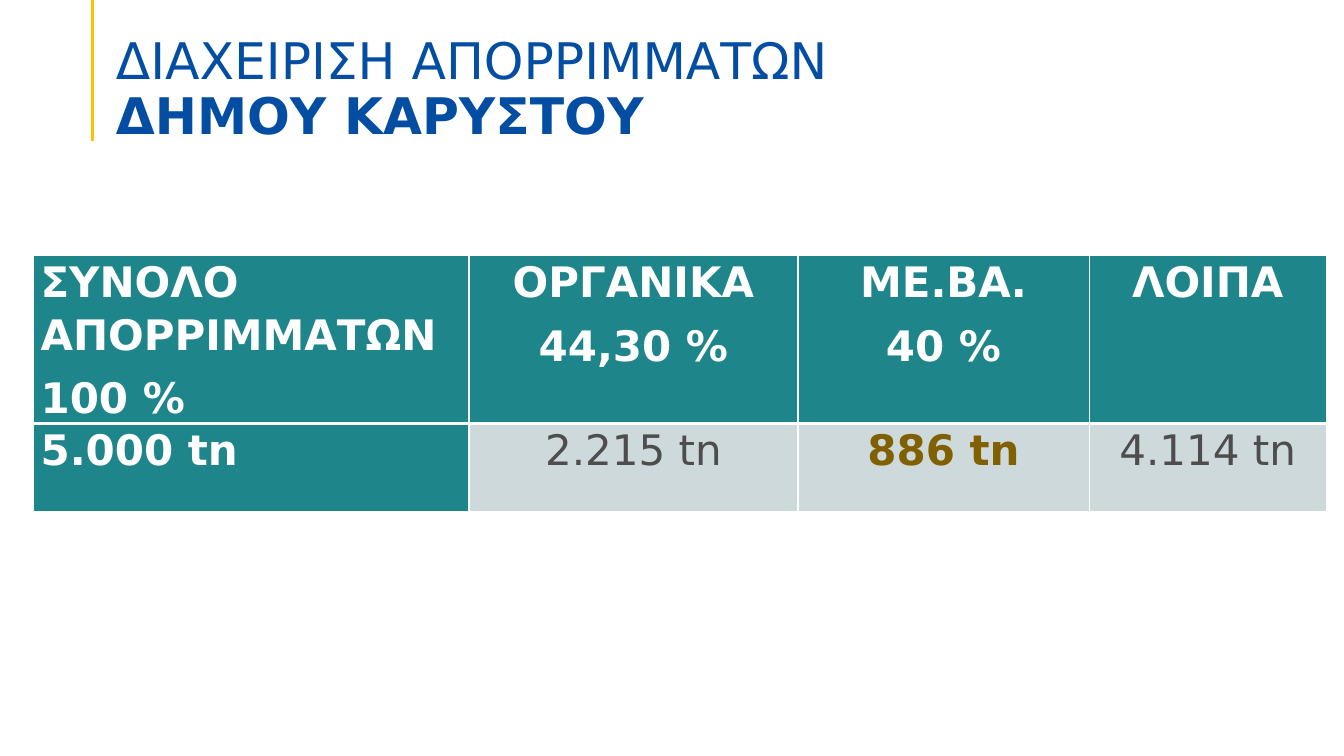
import pptx
import pptx.util
import pptx.dml.color
import pptx.enum.shapes
import pptx.enum.text
import pptx.oxml
import pptx.oxml.ns

Pt = pptx.util.Pt
ALIGN = pptx.enum.text.PP_ALIGN
ANCHOR = pptx.enum.text.MSO_ANCHOR

COLORS = {
    "blue": "034EA2", "gold": "FFC000", "teal": "1E858B", "pale": "CDD9DA",
    "white": "FFFFFF", "gray": "4D4D4D", "brown": "806000",
}
FONT = "DejaVu Sans"
TITLE = [("ΔΙΑΧΕΙΡΙΣΗ ΑΠΟΡΡΙΜΜΑΤΩΝ", False), ("ΔΗΜΟΥ ΚΑΡΥΣΤΟΥ", True)]
WASTE = [
    [["ΣΥΝΟΛΟ ΑΠΟΡΡΙΜΜΑΤΩΝ", "100 %"], ["ΟΡΓΑΝΙΚΑ", "44,30 %"], ["ΜΕ.ΒΑ.", "40 %"], ["ΛΟΙΠΑ"]],
    [["5.000 tn"], ["2.215 tn"], ["886 tn"], ["4.114 tn"]],
]
HIGHLIGHT = (1, 2)
COL_WIDTHS = [311, 235, 208, 169.5]
ROW_HEIGHTS = [120, 63]


def rgb(name):
    return pptx.dml.color.RGBColor.from_string(COLORS[name])


def add_text(p, text, size=30, color="white", bold=False, align=ALIGN.LEFT, spacing=1.07, after=8):
    p.alignment = align
    p.line_spacing = spacing
    p.space_before = Pt(0)
    p.space_after = Pt(after)
    r = p.add_run()
    r.text = text
    r.font.name = FONT
    r.font.size = Pt(size)
    r.font.bold = bold
    r.font.color.rgb = rgb(color)


def set_borders(cell, bottom):
    tc_pr = cell._tc.get_or_add_tcPr()
    for side, width in (("L", 1), ("R", 1), ("T", 1), ("B", bottom)):
        tc_pr.append(pptx.oxml.parse_xml(
            f'<a:ln{side} {pptx.oxml.ns.nsdecls("a")} w="{Pt(width)}"><a:solidFill>'
            f'<a:srgbClr val="{COLORS["white"]}"/></a:solidFill></a:ln{side}>'))


def build_title(s):
    sp = s.shapes.title
    sp.left, sp.top, sp.width, sp.height = Pt(75.6), Pt(17.3), Pt(736.6), Pt(86.4)
    tf = sp.text_frame
    tf.word_wrap = True
    tf.auto_size = pptx.enum.text.MSO_AUTO_SIZE.NONE
    tf.vertical_anchor = ANCHOR.BOTTOM
    tf.margin_left = tf.margin_right = Pt(7.2)
    tf.margin_top, tf.margin_bottom = Pt(3.6), Pt(0)
    p = tf.paragraphs[0]
    for i, (line, bold) in enumerate(TITLE):
        if i:
            p.add_line_break()
        add_text(p, line, size=36, color="blue", bold=bold, spacing=0.9, after=0)


def build_accent(s):
    line = s.shapes.add_connector(pptx.enum.shapes.MSO_CONNECTOR.STRAIGHT, Pt(66.2), 0, Pt(66.2), Pt(100.8))
    line.line.color.rgb = rgb("gold")
    line.line.width = Pt(2.25)
    line._element.spPr.append(pptx.oxml.parse_xml(f'<a:effectLst {pptx.oxml.ns.nsdecls("a")}/>'))


def build_table(s):
    table = s.shapes.add_table(len(WASTE), len(COL_WIDTHS), Pt(24), Pt(182.4),
                               Pt(sum(COL_WIDTHS)), Pt(sum(ROW_HEIGHTS))).table
    for column, width in zip(table.columns, COL_WIDTHS):
        column.width = Pt(width)
    for i, row in enumerate(WASTE):
        table.rows[i].height = Pt(ROW_HEIGHTS[i])
        for j, lines in enumerate(row):
            cell = table.cell(i, j)
            header = i == 0 or j == 0
            highlight = (i, j) == HIGHLIGHT
            set_borders(cell, 3 if i == 0 else 1)
            cell.fill.solid()
            cell.fill.fore_color.rgb = rgb("teal" if header else "pale")
            cell.margin_left = cell.margin_right = Pt(5)
            cell.margin_top = cell.margin_bottom = Pt(0)
            cell.vertical_anchor = ANCHOR.TOP
            tf = cell.text_frame
            for k, line in enumerate(lines):
                p = tf.add_paragraph() if k else tf.paragraphs[0]
                add_text(p, line, bold=header or highlight,
                         color="white" if header else "brown" if highlight else "gray",
                         align=ALIGN.CENTER if j else ALIGN.LEFT)


def main():
    prs = pptx.Presentation()
    prs.slide_width, prs.slide_height = Pt(960), Pt(540)
    s = prs.slides.add_slide(prs.slide_layouts[5])
    build_accent(s)
    build_table(s)
    build_title(s)
    prs.save("out.pptx")


if __name__ == "__main__":
    main()
